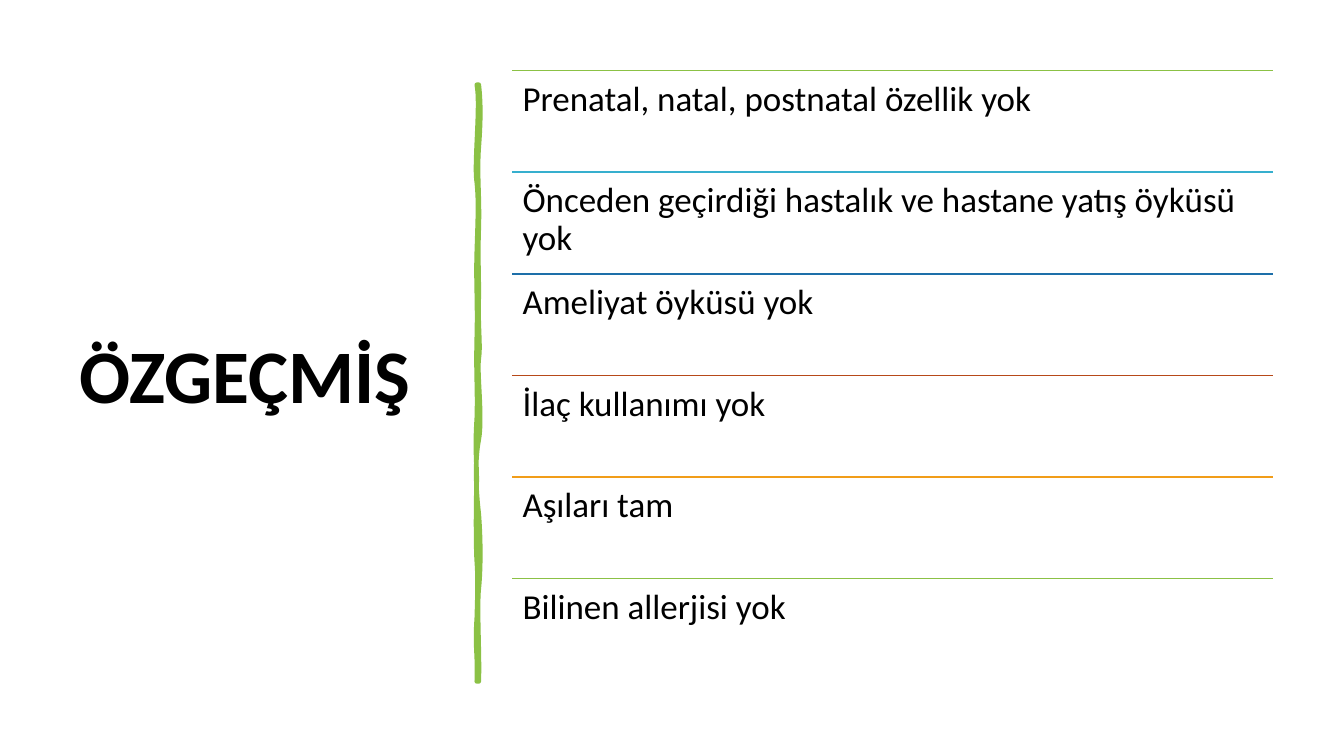
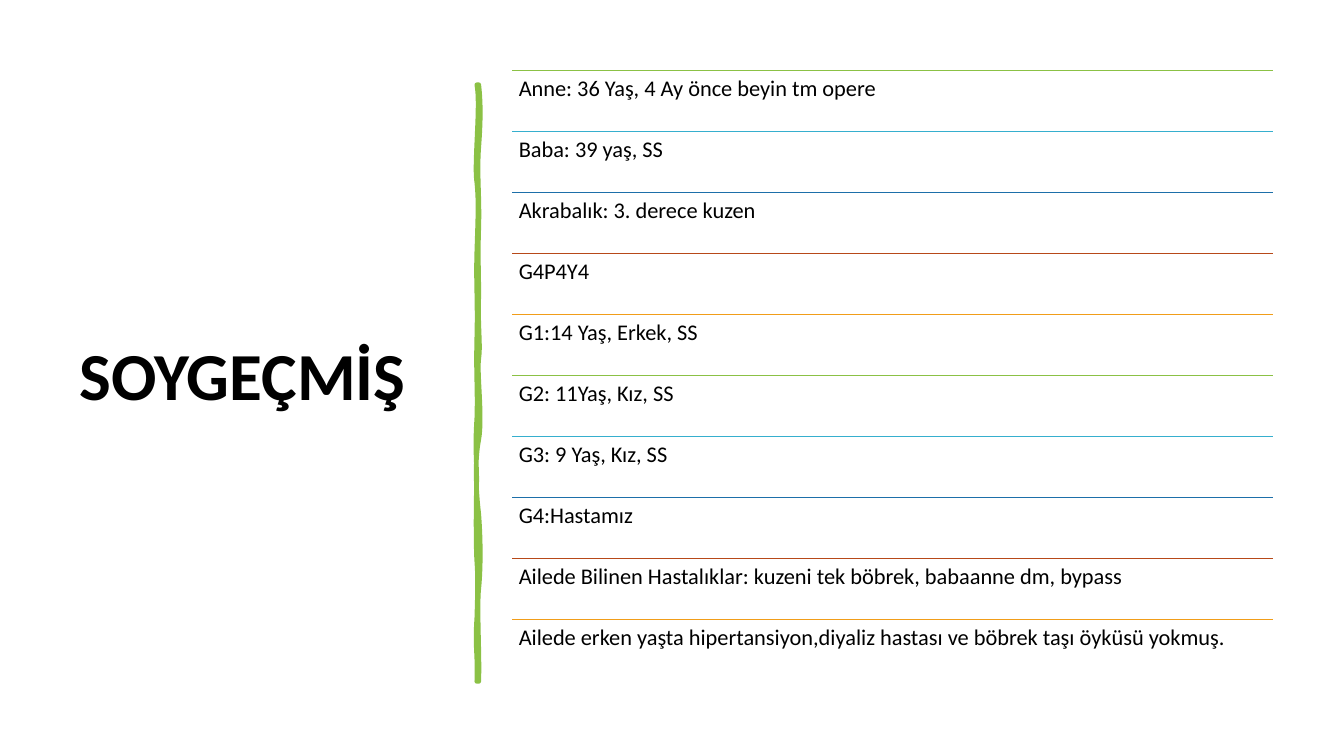
from itertools import cycle

from lxml import etree
from pptx import Presentation
from pptx.dml.color import RGBColor
from pptx.enum.shapes import MSO_CONNECTOR
from pptx.enum.text import MSO_ANCHOR, MSO_AUTO_SIZE, PP_ALIGN
from pptx.oxml.ns import qn
from pptx.util import Inches, Pt

STRAIGHT = MSO_CONNECTOR.STRAIGHT
TOP, MIDDLE = MSO_ANCHOR.TOP, MSO_ANCHOR.MIDDLE
LEFT = PP_ALIGN.LEFT
NO_AUTOFIT = MSO_AUTO_SIZE.NONE

FONT = "Calibri"
COLORS = {
    "text": "000000",
    "green": "8BC145",
    "cyan": "36AFCE",
    "blue": "1D6FA9",
    "rust": "B74919",
    "orange": "F19D19",
}
RULE_COLORS = ("green", "cyan", "blue", "rust", "orange")
TITLE_ONLY = 5
TITLE_INSETS = (Inches(0.1), Inches(0.05))

# Regions: left, top, width, height in inches
TITLE_BOX = (0.69, 0.7, 3.74, 6.11)
STROKE_BOX = (4.73, 0.84, 0.02, 5.92)
LIST_BOX = (5.08, 0.7, 7.55, 6.05)

# Wavy edges of the brush stroke: cubic curves (control, control, end),
# in inches from the top left of the stroke; right edge down, left edge up
STROKE_START = (0.02, 0)
STROKE_CURVES = (
    ((0.04, 0.18), (0.04, 0.35), (0.02, 0.62)),
    ((0, 0.89), (0.03, 1.11), (0.02, 1.42)),
    ((0.01, 1.73), (0.02, 1.78), (0.02, 2.1)),
    ((0.01, 2.41), (0.04, 2.58), (0.02, 2.72)),
    ((0, 2.86), (0.06, 3.3), (0.02, 3.52)),
    ((-0.02, 3.73), (-0.01, 4), (0.02, 4.26)),
    ((0.04, 4.52), (0.04, 4.8), (0.02, 5)),
    ((0, 5.19), (0.03, 5.66), (0.02, 5.92)),
    ((0.01, 5.92), (0, 5.92), (0, 5.92)),
    ((0.01, 5.62), (-0.02, 5.6), (0, 5.29)),
    ((0.01, 4.99), (0.01, 4.86), (0, 4.73)),
    ((-0.01, 4.6), (-0.01, 4.11), (0, 3.93)),
    ((0, 3.75), (-0.02, 3.61), (0, 3.31)),
    ((0.01, 3.02), (-0.01, 2.89), (0, 2.51)),
    ((0.01, 2.14), (-0.01, 1.97), (0, 1.66)),
    ((0.01, 1.34), (0.02, 1.16), (0, 0.97)),
    ((-0.03, 0.79), (0.04, 0.2), (0, 0)),
)

SLIDES = (
    {
        "title": "ÖZGEÇMİŞ", "title_size": 54, "size": 25,
        "items": (
            "Prenatal, natal, postnatal özellik yok",
            "Önceden geçirdiği hastalık ve hastane yatış öyküsü yok",
            "Ameliyat öyküsü yok",
            "İlaç kullanımı yok",
            "Aşıları tam",
            "Bilinen allerjisi yok",
        ),
    },
    {
        "title": "SOYGEÇMİŞ", "title_size": 48, "size": 16,
        "items": (
            "Anne: 36 Yaş, 4 Ay önce beyin tm opere",
            "Baba: 39 yaş, SS",
            "Akrabalık: 3. derece kuzen",
            "G4P4Y4",
            "G1:14 Yaş, Erkek, SS",
            "G2: 11Yaş, Kız, SS",
            "G3: 9 Yaş, Kız, SS",
            "G4:Hastamız",
            "Ailede Bilinen Hastalıklar: kuzeni tek böbrek, babaanne dm, bypass",
            "Ailede erken yaşta hipertansiyon,diyaliz hastası ve böbrek taşı "
            "öyküsü yokmuş.",
        ),
    },
)


def rgb(name):
    return RGBColor.from_string(COLORS[name])


def write_text(shape, text, *, size, insets, bold=False, anchor=TOP):
    """Fill a shape with one left-aligned paragraph."""
    frame = shape.text_frame
    frame.word_wrap = True
    frame.auto_size = NO_AUTOFIT
    frame.vertical_anchor = anchor
    frame.margin_left = frame.margin_right = insets[0]
    frame.margin_top = frame.margin_bottom = insets[1]
    para = frame.paragraphs[0]
    para.alignment = LEFT
    para.line_spacing = 0.9
    span = para.add_run()
    span.text = text
    span.font.name = FONT
    span.font.size = Pt(size)
    span.font.bold = bold
    span.font.color.rgb = rgb("text")


def add_title(page, box, text, size):
    title = page.shapes.title
    title.left, title.top, title.width, title.height = map(Inches, box)
    write_text(
        title, text, size=size, insets=TITLE_INSETS, bold=True, anchor=MIDDLE
    )


def bend_segments(shape, curves):
    """Turn each straight segment of a freeform into a cubic curve."""
    segments = list(shape._element.iter(qn("a:lnTo")))
    for segment, points in zip(segments, curves):
        curve = etree.Element(qn("a:cubicBezTo"))
        for x, y in points:
            etree.SubElement(
                curve, qn("a:pt"), x=str(Inches(x)), y=str(Inches(y))
            )
        segment.getparent().replace(segment, curve)


def add_brush_stroke(page, box):
    left, top = box[:2]

    def place(point):
        return Inches(left + point[0]), Inches(top + point[1])

    builder = page.shapes.build_freeform(*place(STROKE_START))
    builder.add_line_segments([place(curve[-1]) for curve in STROKE_CURVES])
    builder.add_line_segments([place(STROKE_START)], close=True)
    stroke = builder.convert_to_shape()
    bend_segments(stroke, STROKE_CURVES)
    stroke.shadow.inherit = False
    stroke.fill.solid()
    stroke.fill.fore_color.rgb = rgb("green")
    stroke.line.color.rgb = rgb("green")
    stroke.line.width = Pt(3.25)
    etree.SubElement(stroke.line._get_or_add_ln(), qn("a:round"))


def add_rule(group, left, top, width, color):
    rule = group.shapes.add_connector(
        STRAIGHT, Inches(left), Inches(top), Inches(left + width), Inches(top)
    )
    rule.line.color.rgb = rgb(color)
    rule.line.width = Pt(1)
    etree.SubElement(rule._element.spPr, qn("a:effectLst"))


def add_ruled_list(page, box, items, size):
    """Share the box equally between items, each under a coloured rule."""
    left, top, width, height = box
    row_height = height / len(items)
    inset = Pt(0.3 * size)
    group = page.shapes.add_group_shape()
    for index, (item, color) in enumerate(zip(items, cycle(RULE_COLORS))):
        row_top = top + index * row_height
        add_rule(group, left, row_top, width, color)
        row = group.shapes.add_textbox(
            *map(Inches, (left, row_top, width, row_height))
        )
        write_text(row, item, size=size, insets=(inset, inset))


def add_history_slide(deck, content):
    page = deck.slides.add_slide(deck.slide_layouts[TITLE_ONLY])
    add_title(page, TITLE_BOX, content["title"], content["title_size"])
    add_brush_stroke(page, STROKE_BOX)
    add_ruled_list(page, LIST_BOX, content["items"], content["size"])


def main():
    deck = Presentation()
    deck.slide_width, deck.slide_height = Inches(40 / 3), Inches(7.5)
    for content in SLIDES:
        add_history_slide(deck, content)
    deck.save("out.pptx")


if __name__ == "__main__":
    main()
